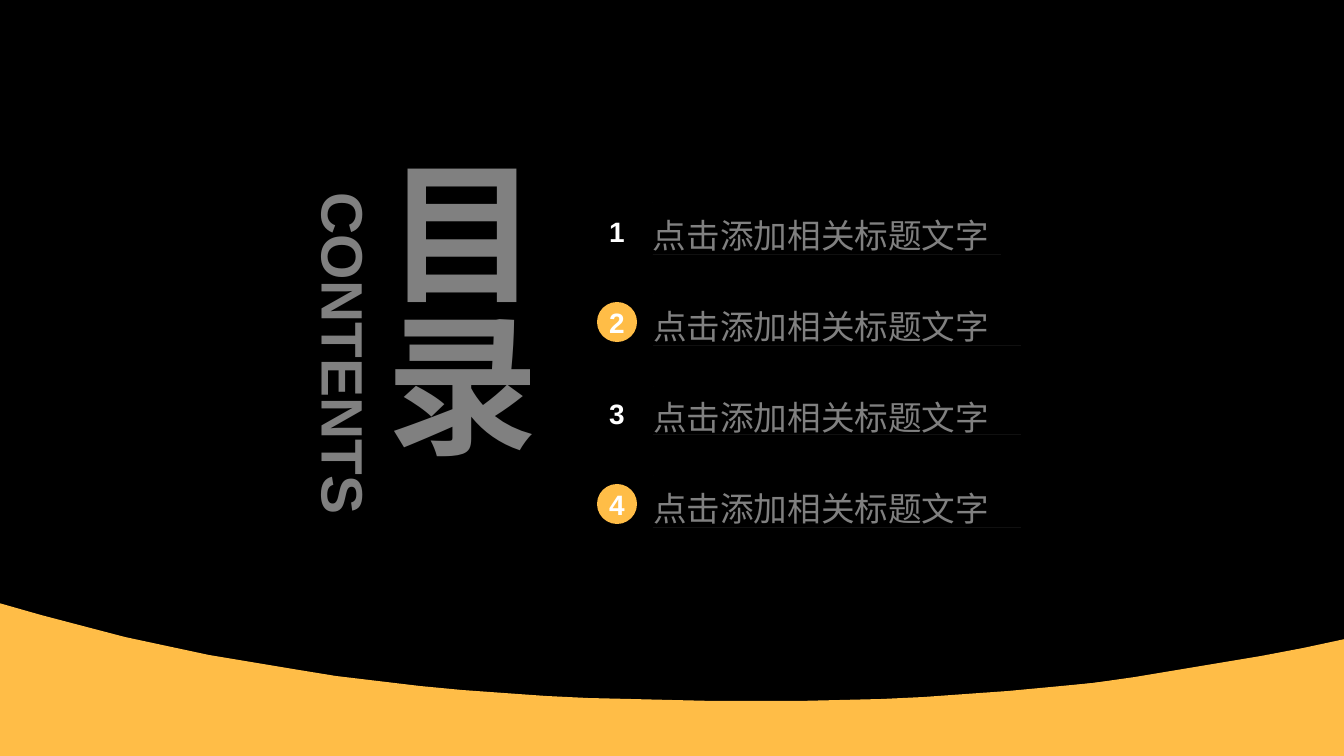
import pptx
import pptx.dml.color
import pptx.enum.shapes
import pptx.enum.text
import pptx.util

PX = 914400 / 95.6
WIDTH, HEIGHT = 1344, 756
COLORS = {"background": "000000", "grey": "808080", "yellow": "FFBD47", "white": "FFFFFF"}
ALIGN = pptx.enum.text.PP_ALIGN
ANCHOR = pptx.enum.text.MSO_ANCHOR


def style_shape(shape, color):
    shape.shadow.inherit = False
    shape.line.fill.background()
    shape.fill.solid()
    shape.fill.fore_color.rgb = pptx.dml.color.RGBColor.from_string(COLORS[color])


def write_text(shape, text, size, color, bold=True, align=ALIGN.CENTER,
               anchor=ANCHOR.MIDDLE, grow=True):
    frame = shape.text_frame
    frame.text = text
    frame.word_wrap = True
    frame.vertical_anchor = anchor
    frame.margin_left = frame.margin_top = frame.margin_right = frame.margin_bottom = 0
    if grow:
        frame.auto_size = pptx.enum.text.MSO_AUTO_SIZE.SHAPE_TO_FIT_TEXT
    paragraph = frame.paragraphs[0]
    paragraph.alignment = align
    font = paragraph.runs[0].font
    font.name = "Arial"
    font.size = pptx.util.Pt(size)
    font.bold = bold
    font.color.rgb = pptx.dml.color.RGBColor.from_string(COLORS[color])


presentation = pptx.Presentation()
presentation.slide_width = round(WIDTH * PX)
presentation.slide_height = round(HEIGHT * PX)
slide = presentation.slides.add_slide(presentation.slide_layouts[6])
slide.background.fill.solid()
slide.background.fill.fore_color.rgb = pptx.dml.color.RGBColor.from_string(COLORS["background"])

# Vertical title and its rotated subtitle
title = slide.shapes.add_textbox(*[round(v * PX) for v in (365, 156, 185, 397)])
write_text(title, "目录", 115, "grey")
title.element.txBody.bodyPr.set("vert", "eaVert")

subtitle = slide.shapes.add_textbox(*[round(v * PX) for v in (172, 318, 345, 71)])
subtitle.rotation = 90
write_text(subtitle, "CONTENTS", 44, "grey", anchor=ANCHOR.TOP)

# Contents rows: numbered circle and underlined heading, at an equal pitch
ROW_PITCH = 91
CIRCLE_LEFT, CIRCLE_TOP, CIRCLE_SIZE = 597, 211, 40
HEADING_LEFT, HEADING_MIDDLE = 653, 229
heading_sizes = [(348, 52), (368, 52), (368, 48), (368, 52)]  # width, height
for index, (heading_width, heading_height) in enumerate(heading_sizes):
    row_offset = index * ROW_PITCH
    circle = slide.shapes.add_shape(
        pptx.enum.shapes.MSO_SHAPE.OVAL,
        *[round(v * PX) for v in (CIRCLE_LEFT, CIRCLE_TOP + row_offset, CIRCLE_SIZE, CIRCLE_SIZE)])
    style_shape(circle, "yellow" if index % 2 else "background")
    write_text(circle, str(index + 1), 21.1, "white", grow=False)

    # A flat outline at the bottom draws the hairline; a point at the top sets the text area
    top = HEADING_MIDDLE + row_offset - heading_height // 2
    bottom = top + heading_height
    builder = slide.shapes.build_freeform(HEADING_LEFT, bottom, scale=PX)
    builder.add_line_segments([(HEADING_LEFT + heading_width, bottom), (HEADING_LEFT, bottom)])
    builder.move_to(HEADING_LEFT, top)
    builder.add_line_segments([(HEADING_LEFT, top)])
    heading = builder.convert_to_shape()
    style_shape(heading, "grey")
    write_text(heading, "点击添加相关标题文字", 25.3, "grey", bold=False, align=ALIGN.LEFT)
    heading.text_frame.paragraphs[0].line_spacing = 1.3

# Two overlapping waves: each edge rises from its trough as a power of the distance
WAVE_LEFT, WAVE_RIGHT, WAVE_STEPS = -1, WIDTH + 1, 32
waves = [
    {"trough": (755, 701), "left_rise": 98, "left_power": 2.3, "right_rise": 58, "right_power": 2.1},
    {"trough": (645, 713), "left_rise": 63, "left_power": 1.95, "right_rise": 74, "right_power": 2},
]
for wave in waves:
    trough_x, trough_y = wave["trough"]
    builder = slide.shapes.build_freeform(WAVE_LEFT, HEIGHT, scale=PX)
    crest = []
    for step in range(WAVE_STEPS + 1):
        x = WAVE_LEFT + (WAVE_RIGHT - WAVE_LEFT) * step / WAVE_STEPS
        side, edge = ("left", WAVE_LEFT) if x < trough_x else ("right", WAVE_RIGHT)
        distance = (x - trough_x) / (edge - trough_x)
        crest.append((x, trough_y - wave[side + "_rise"] * distance ** wave[side + "_power"]))
    builder.add_line_segments(crest + [(WAVE_RIGHT, HEIGHT)], close=True)
    style_shape(builder.convert_to_shape(), "yellow")

presentation.save("out.pptx")
